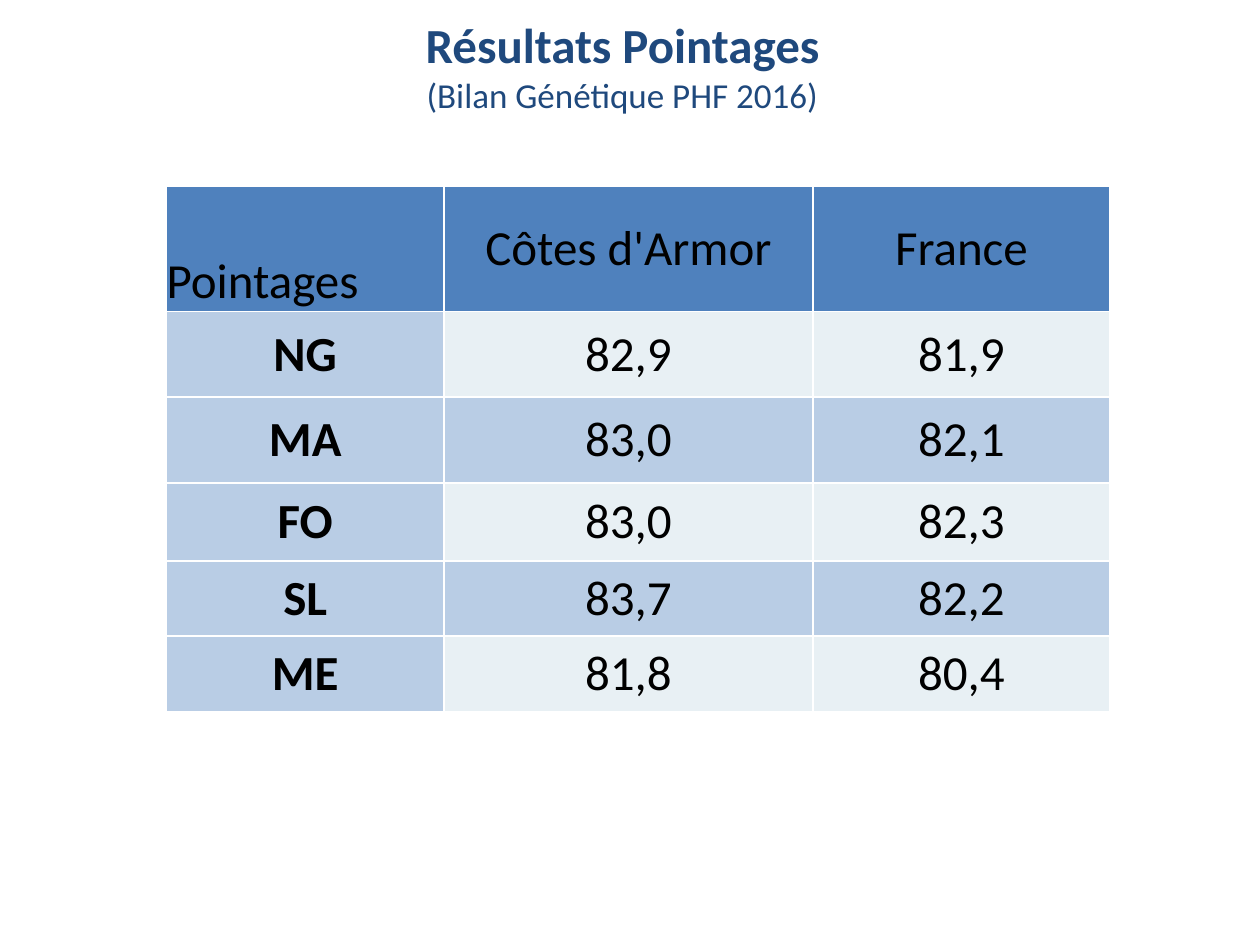
from copy import deepcopy

from lxml import etree
from pptx import Presentation
from pptx.dml.color import RGBColor
from pptx.enum import text
from pptx.oxml import ns
from pptx.util import Pt

FONT = "Calibri"
BLACK = RGBColor(0x00, 0x00, 0x00)
WHITE = RGBColor(0xFF, 0xFF, 0xFF)
NAVY = RGBColor(0x1F, 0x49, 0x7D)
HEADER_BLUE = RGBColor(0x4F, 0x81, 0xBD)
BAND_BLUE = RGBColor(0xB9, 0xCD, 0xE5)
PALE_BLUE = RGBColor(0xE8, 0xF0, 0xF4)

COLUMN_WIDTHS = [158.4, 211, 169.6]
ROW_HEIGHTS = [72, 49, 49, 44.6, 43, 43]
SCORES = [
    ["Pointages", "Côtes d'Armor", "France"],
    ["NG", "82,9", "81,9"],
    ["MA", "83,0", "82,1"],
    ["FO", "83,0", "82,3"],
    ["SL", "83,7", "82,2"],
    ["ME", "81,8", "80,4"],
]


def add_text(paragraph, content, size=28, color=BLACK, bold=False,
             align=text.PP_ALIGN.CENTER):
    paragraph.alignment = align
    run = paragraph.add_run()
    run.text = content
    run.font.name = FONT
    run.font.size = Pt(size)
    run.font.bold = bold
    run.font.color.rgb = color
    return run


def add_break_after(run):
    line_break = etree.Element(ns.qn("a:br"))
    line_break.append(deepcopy(run.font._element))
    run._r.addnext(line_break)


def clear_margins(box):
    box.margin_left = box.margin_right = box.margin_top = box.margin_bottom = 0


def set_borders(cell, top_width):
    properties = cell._tc.get_or_add_tcPr()
    widths = {"lnL": 1, "lnR": 1, "lnT": top_width, "lnB": 1}
    for position, (side, width) in enumerate(widths.items()):
        line = etree.Element(ns.qn(f"a:{side}"), w=str(Pt(width)))
        fill = etree.SubElement(line, ns.qn("a:solidFill"))
        etree.SubElement(fill, ns.qn("a:srgbClr"), val=str(WHITE))
        properties.insert(position, line)


def cell_fill(row, column):
    if row == 0:
        return HEADER_BLUE
    return BAND_BLUE if column == 0 or row % 2 == 0 else PALE_BLUE


def fill_cell(cell, content, row, column):
    corner = row == 0 and column == 0
    clear_margins(cell)
    cell.vertical_anchor = text.MSO_ANCHOR.BOTTOM if corner else text.MSO_ANCHOR.MIDDLE
    cell.fill.solid()
    cell.fill.fore_color.rgb = cell_fill(row, column)
    set_borders(cell, top_width=1.5 if row == 0 else 1)
    add_text(cell.text_frame.paragraphs[0], content,
             bold=row > 0 and column == 0,
             align=text.PP_ALIGN.LEFT if corner else text.PP_ALIGN.CENTER)


def add_score_table(slide):
    table = slide.shapes.add_table(
        len(SCORES), len(COLUMN_WIDTHS), Pt(95.2), Pt(106),
        Pt(sum(COLUMN_WIDTHS)), Pt(sum(ROW_HEIGHTS))).table
    for column, width in zip(table.columns, COLUMN_WIDTHS):
        column.width = Pt(width)
    for row, height in zip(table.rows, ROW_HEIGHTS):
        row.height = Pt(height)
    for row, values in enumerate(SCORES):
        for column, content in enumerate(values):
            fill_cell(table.cell(row, column), content, row, column)


def format_title(title):
    title.left, title.top, title.width, title.height = Pt(0), Pt(9.4), Pt(711.4), Pt(55.4)
    frame = title.text_frame
    frame.word_wrap = True
    frame.auto_size = text.MSO_AUTO_SIZE.NONE
    frame.vertical_anchor = text.MSO_ANCHOR.MIDDLE
    paragraph = frame.paragraphs[0]
    heading = add_text(paragraph, "Résultats Pointages", color=NAVY, bold=True)
    add_break_after(heading)
    add_text(paragraph, "(Bilan Génétique PHF 2016)", size=20, color=NAVY)


def main():
    presentation = Presentation()
    presentation.slide_width, presentation.slide_height = Pt(720), Pt(540)
    slide = presentation.slides.add_slide(presentation.slide_layouts[5])
    add_score_table(slide)
    format_title(slide.shapes.title)
    presentation.save("out.pptx")


if __name__ == "__main__":
    main()
